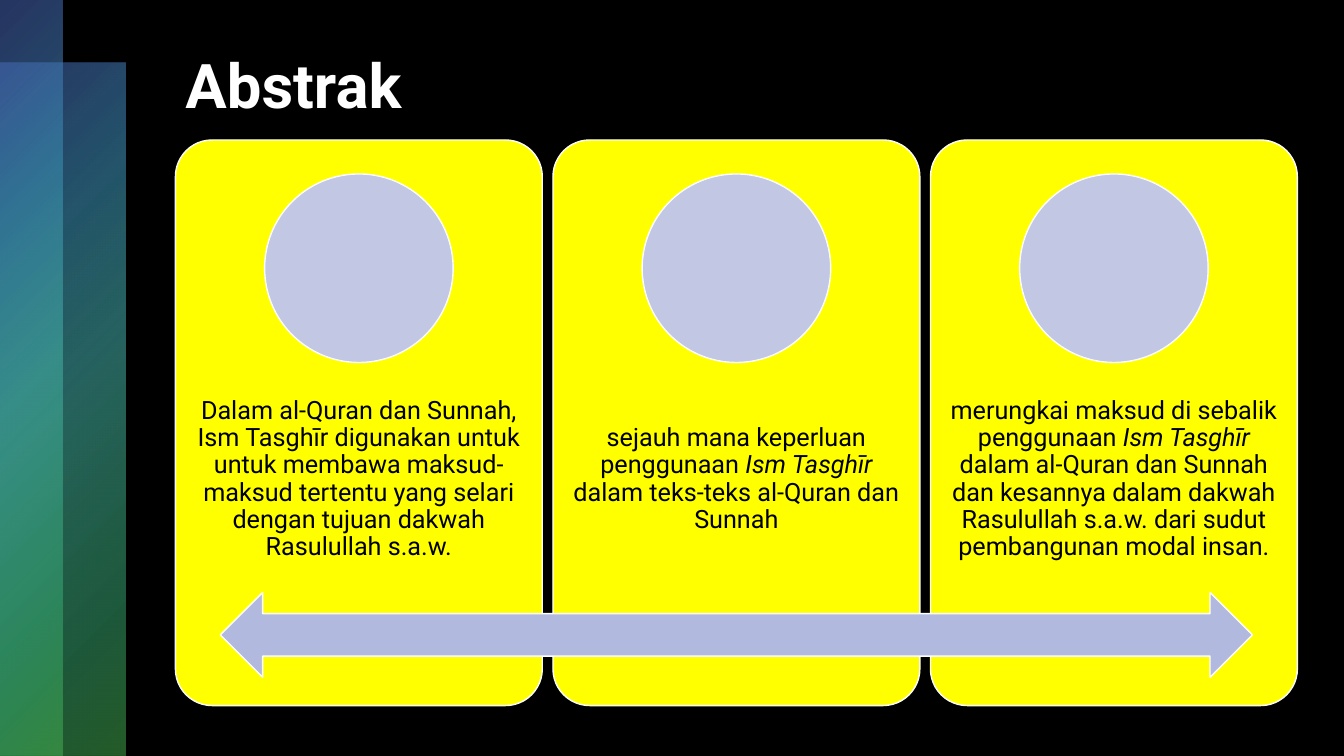
from pptx import Presentation
from pptx.dml.color import RGBColor
from pptx.enum.shapes import MSO_SHAPE
from pptx.enum.text import MSO_ANCHOR, PP_ALIGN
from pptx.oxml import parse_xml
from pptx.oxml.ns import nsdecls
from pptx.util import Pt

FONT = "Roboto"
COLORS = {
    "background": "000000",
    "title": "FFFFFF",
    "outline": "FFFFFF",
    "card": "FFFF00",
    "text": "000000",
    "circle": "C2C7E4",
    "arrow": "B2B9DE",
}
# Position, colour and opacity, all positions and opacities in percent
BAND_STOPS = [
    (0, "4D6AC3", 50),
    (25, "3B8AB1", 60),
    (50, "46B3AA", 55),
    (81, "3BB176", 50),
    (99, "48B851", 50),
]
# Each card is a list of (text, italic) runs
CARDS = [
    [("Dalam al-Quran dan Sunnah, Ism Tasghīr digunakan untuk untuk membawa "
      "maksud-maksud tertentu yang selari dengan tujuan dakwah Rasulullah s.a.w.", False)],
    [("sejauh mana keperluan penggunaan ", False),
     ("Ism Tasghīr ", True),
     ("dalam teks-teks al-Quran dan Sunnah", False)],
    [("merungkai maksud di sebalik penggunaan ", False),
     ("Ism Tasghīr ", True),
     ("dalam al-Quran dan Sunnah dan kesannya dalam dakwah Rasulullah s.a.w. "
      "dari sudut pembangunan modal insan.", False)],
]


def color(name):
    return RGBColor.from_string(COLORS[name])


def add_outlined(slide, kind, fill, left, top, width, height):
    shape = slide.shapes.add_shape(kind, Pt(left), Pt(top), Pt(width), Pt(height))
    shape.shadow.inherit = False
    shape.fill.solid()
    shape.fill.fore_color.rgb = color(fill)
    shape.line.color.rgb = color("outline")
    shape.line.width = Pt(1)
    return shape


def add_band(slide, left, top, width, height):
    band = slide.shapes.add_shape(MSO_SHAPE.RECTANGLE, Pt(left), Pt(top), Pt(width), Pt(height))
    band.shadow.inherit = False
    band.line.fill.background()
    # Translucent gradient spreading from the top left corner
    stops = "".join(
        f'<a:gs pos="{position * 1000}"><a:srgbClr val="{value}">'
        f'<a:alpha val="{opacity * 1000}"/></a:srgbClr></a:gs>'
        for position, value, opacity in BAND_STOPS)
    gradient = parse_xml(
        f'<a:gradFill {nsdecls("a")} rotWithShape="1"><a:gsLst>{stops}</a:gsLst>'
        '<a:path path="circle"><a:fillToRect r="100000" b="100000"/></a:path></a:gradFill>')
    band._element.spPr.prstGeom.addnext(gradient)


def add_title(slide, text, left, top, width, height):
    title = slide.shapes.title
    title.left, title.top, title.width, title.height = Pt(left), Pt(top), Pt(width), Pt(height)
    title.text_frame.text = text
    title.text_frame.vertical_anchor = MSO_ANCHOR.TOP
    paragraph = title.text_frame.paragraphs[0]
    paragraph.alignment = PP_ALIGN.LEFT
    paragraph.line_spacing = 0.9
    paragraph.font.name = FONT
    paragraph.font.size = Pt(44)
    paragraph.font.bold = True
    paragraph.font.color.rgb = color("title")


def add_card(slide, runs, left, top, width, height):
    card = add_outlined(slide, MSO_SHAPE.ROUNDED_RECTANGLE, "card", left, top, width, height)
    card.adjustments[0] = 0.1

    # Text fills the middle of the card
    box = slide.shapes.add_textbox(
        Pt(left), Pt(top + 0.4 * height), Pt(width), Pt(0.4 * height))
    frame = box.text_frame
    frame.word_wrap = True
    frame.vertical_anchor = MSO_ANCHOR.MIDDLE
    frame.margin_left = frame.margin_right = Pt(10)
    frame.margin_top = frame.margin_bottom = Pt(10)
    paragraph = frame.paragraphs[0]
    paragraph.alignment = PP_ALIGN.CENTER
    paragraph.line_spacing = 0.9
    paragraph.space_after = Pt(6.3)
    paragraph.font.name = FONT
    paragraph.font.size = Pt(18)
    paragraph.font.color.rgb = color("text")
    for text, italic in runs:
        run = paragraph.add_run()
        run.text = text
        run.font.italic = italic

    # Circle centred in the upper part
    diameter = height / 3
    add_outlined(slide, MSO_SHAPE.OVAL, "circle", left + (width - diameter) / 2,
                 top + 0.06 * height, diameter, diameter)


def add_cards(slide, left, top, width, height):
    gap = 7.6
    card_width = (width - gap * (len(CARDS) - 1)) / len(CARDS)
    for index, runs in enumerate(CARDS):
        add_card(slide, runs, left + index * (card_width + gap), top, card_width, height)
    # Double arrow across all cards
    add_outlined(slide, MSO_SHAPE.LEFT_RIGHT_ARROW, "arrow", left + 0.04 * width,
                 top + 0.8 * height, 0.92 * width, 0.15 * height)


def main():
    presentation = Presentation()
    presentation.slide_width, presentation.slide_height = Pt(960), Pt(540)
    slide = presentation.slides.add_slide(presentation.slide_layouts[5])
    slide.background.fill.solid()
    slide.background.fill.fore_color.rgb = color("background")

    add_band(slide, 0, 44.6, 90, 495.4)
    add_band(slide, 0, 0, 45, 540)
    add_title(slide, "Abstrak", 125.3, 36, 872 - 125.3, 122.4)
    add_cards(slide, 125.3, 100, 801.4, 404)
    presentation.save("out.pptx")


if __name__ == "__main__":
    main()
